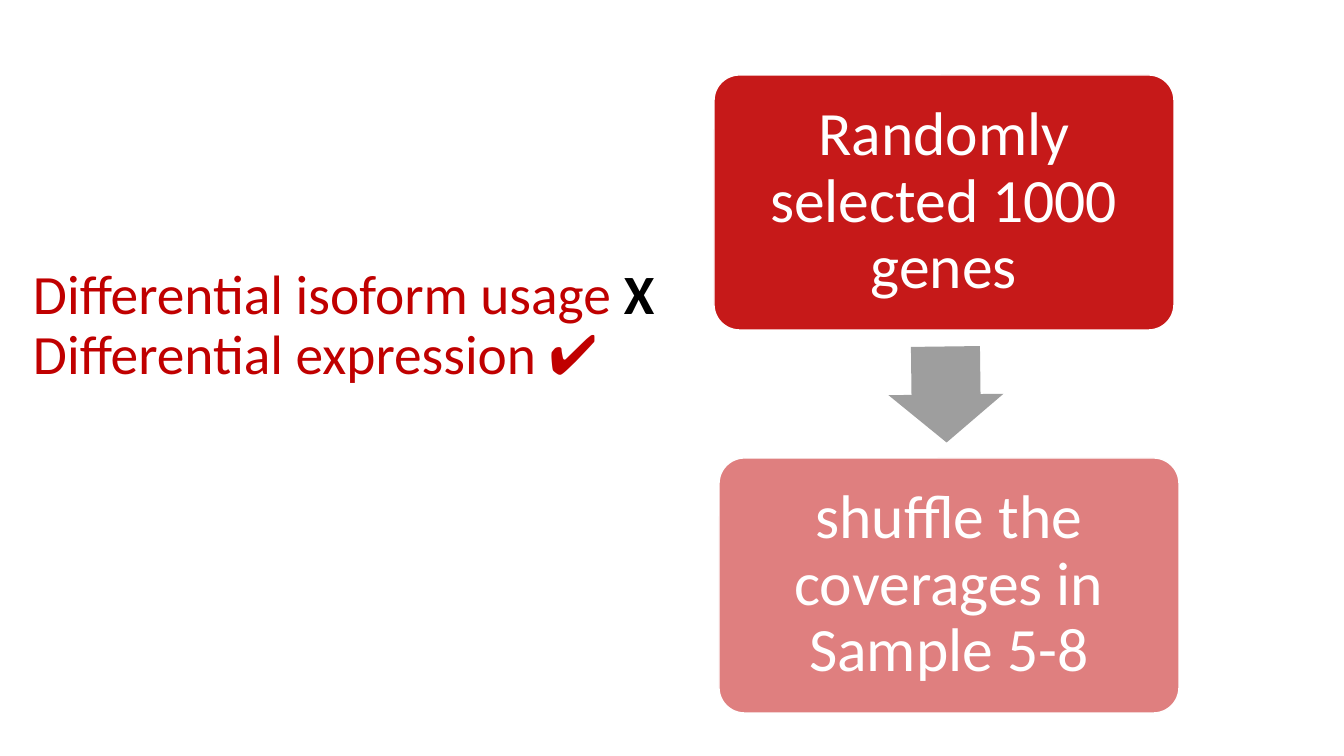
from lxml import etree
from pptx import Presentation
from pptx import util as u
from pptx.dml.color import RGBColor
from pptx.enum import shapes, text
from pptx.oxml.ns import qn

PX = 914400 / 100.8
FONT = "Calibri"
COLORS = {"red": "C00000", "grey": "9E9E9E", "white": "FFFFFF", "black": "000000"}
TITLE_LINES = [
    [("Differential isoform usage ", "red", False), ("X", "black", True)],
    [("Differential expression ✔", "red", False)],
]
STEPS = [
    ("Randomly selected 1000 genes", (714, 75), 90),
    ("shuffle the coverages in Sample 5-8", (719, 458), 50),
]
STEP_SIZE = (460, 255)


def px(value):
    return u.Emu(round(value * PX))


def rgb(name):
    return RGBColor.from_string(COLORS[name])


def set_attributes(target, values):
    for name, value in values.items():
        setattr(target, name, value)


def format_frame(frame, margins):
    set_attributes(frame, {
        "word_wrap": True,
        "auto_size": text.MSO_AUTO_SIZE.NONE,
        "vertical_anchor": text.MSO_ANCHOR.MIDDLE,
    })
    for side, margin in zip(("left", "top", "right", "bottom"), margins):
        setattr(frame, f"margin_{side}", px(margin))


def format_paragraph(paragraph, alignment):
    set_attributes(paragraph, {"alignment": alignment, "line_spacing": 0.9})


def add_run(paragraph, words, size, color, bold=False):
    run = paragraph.add_run()
    run.text = words
    set_attributes(run.font, {"name": FONT, "size": u.Pt(size), "bold": bold})
    run.font.color.rgb = rgb(color)


def set_title(slide):
    title = slide.shapes.title
    set_attributes(title, {
        "left": px(11), "top": px(255), "width": px(697), "height": px(203),
    })
    format_frame(title.text_frame, (22, 5, 10, 65))
    paragraph = title.text_frame.paragraphs[0]
    format_paragraph(paragraph, text.PP_ALIGN.LEFT)
    for index, line in enumerate(TITLE_LINES):
        if index:
            paragraph.add_line_break()
        for words, color, bold in line:
            add_run(paragraph, words, 39.6, color, bold)


def add_filled_shape(slide, kind, box, color, adjustments):
    shape = slide.shapes.add_shape(kind, *map(px, box))
    shape.shadow.inherit = False
    shape.fill.solid()
    shape.fill.fore_color.rgb = rgb(color)
    for index, value in enumerate(adjustments):
        shape.adjustments[index] = value
    return shape


def add_step(slide, words, position, opacity):
    shape = add_filled_shape(slide, shapes.MSO_SHAPE.ROUNDED_RECTANGLE,
                             position + STEP_SIZE, "red", [0.1])
    fill_color = shape.fill._xPr.find(qn("a:solidFill"))[0]
    etree.SubElement(fill_color, qn("a:alpha")).set("val", str(opacity * 1000))
    shape.line.color.rgb = rgb("white")
    shape.line.width = u.Pt(1)
    format_frame(shape.text_frame, (18, 18, 18, 18))
    paragraph = shape.text_frame.paragraphs[0]
    format_paragraph(paragraph, text.PP_ALIGN.CENTER)
    add_run(paragraph, words, 44, "white")


def add_arrow(slide):
    arrow = add_filled_shape(slide, shapes.MSO_SHAPE.RIGHT_ARROW,
                             (898, 337, 96, 115), "grey", [0.6, 0.5])
    arrow.rotation = 89.3
    arrow.line.fill.background()


def main():
    presentation = Presentation()
    set_attributes(presentation, {"slide_width": px(1344), "slide_height": px(756)})
    slide = presentation.slides.add_slide(presentation.slide_layouts[5])
    set_title(slide)
    for step in STEPS:
        add_step(slide, *step)
    add_arrow(slide)
    presentation.save("out.pptx")


if __name__ == "__main__":
    main()
